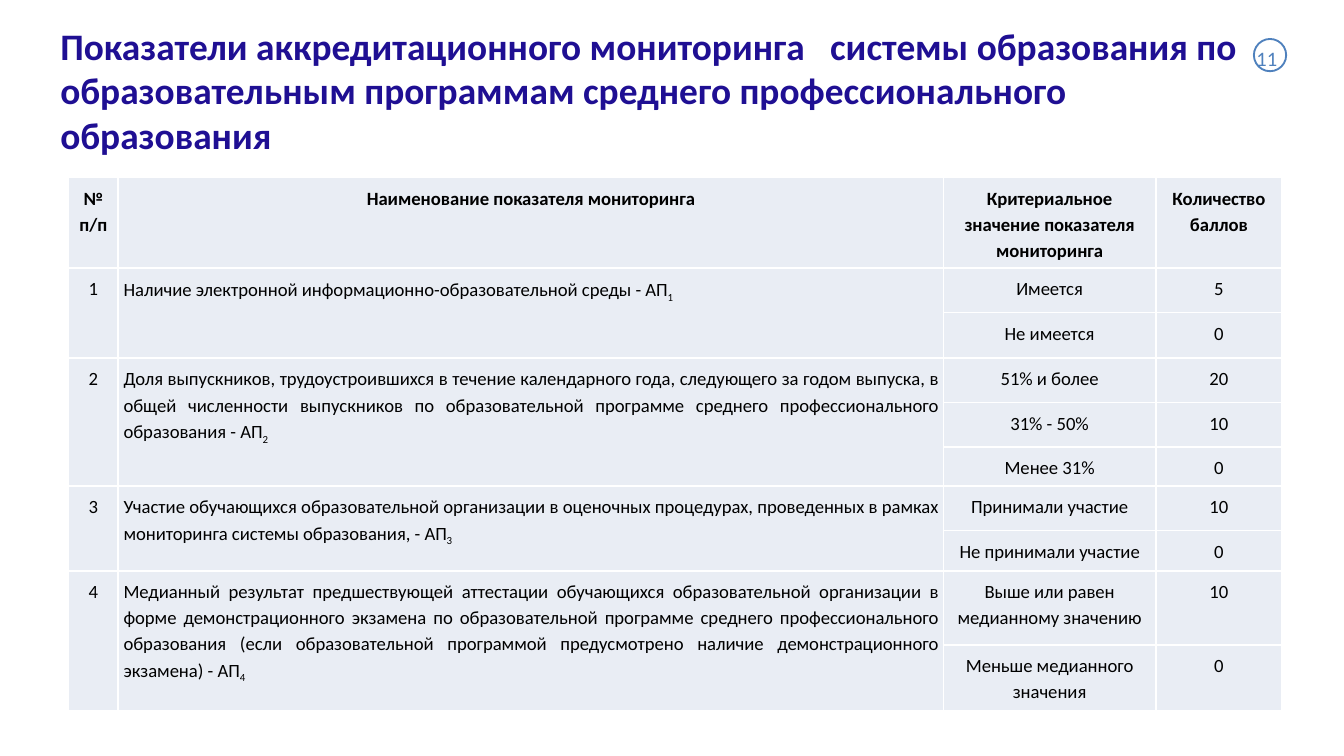
from lxml import etree
from pptx import Presentation
from pptx.dml.color import RGBColor
from pptx.enum.shapes import MSO_SHAPE
from pptx.enum.text import MSO_ANCHOR, PP_ALIGN
from pptx.oxml.ns import qn
from pptx.util import Inches, Pt

CENTER, JUSTIFY = PP_ALIGN.CENTER, PP_ALIGN.JUSTIFY
MIDDLE = MSO_ANCHOR.MIDDLE
OVAL = MSO_SHAPE.OVAL

NAVY = RGBColor(0x1F, 0x0F, 0x93)
BLUE = RGBColor(0x4F, 0x81, 0xBD)
PALE = RGBColor(0xE9, 0xED, 0xF4)
BLACK = RGBColor(0, 0, 0)
WHITE = RGBColor(0xFF, 0xFF, 0xFF)
FONT = "Calibri"

TITLE = ("Показатели аккредитационного мониторинга   системы образования по "
         "образовательным программам среднего профессионального образования")
HEADINGS = ["№ п/п", "Наименование показателя мониторинга",
            "Критериальное значение показателя мониторинга", "Количество баллов"]
# Each indicator: its name, then (criterion, points) pairs
INDICATORS = [
    ("Наличие электронной информационно-образовательной среды - АП",
     [("Имеется", 5), ("Не имеется", 0)]),
    ("Доля выпускников, трудоустроившихся в течение календарного года, следующего "
     "за годом выпуска, в общей численности выпускников по образовательной программе "
     "среднего профессионального образования - АП",
     [("51% и более", 20), ("31% - 50%", 10), ("Менее 31%", 0)]),
    ("Участие обучающихся образовательной организации в оценочных процедурах, "
     "проведенных в рамках мониторинга системы образования, - АП",
     [("Принимали участие", 10), ("Не принимали участие", 0)]),
    ("Медианный результат предшествующей аттестации обучающихся образовательной "
     "организации в форме демонстрационного экзамена по образовательной программе "
     "среднего профессионального образования (если образовательной программой "
     "предусмотрено наличие демонстрационного экзамена) - АП",
     [("Выше или равен медианному значению", 10), ("Меньше медианного значения", 0)]),
]
COLUMN_WIDTHS = [0.37, 6.14, 1.58, 0.94]
ROW_HEIGHTS = [0.61, 0.33, 0.34, 0.33, 0.33, 0.29, 0.33, 0.3, 0.55, 0.49]


def set_font(paragraph, size, color, bold=False):
    font = paragraph.font
    font.name, font.size, font.bold = FONT, Pt(size), bold
    font.color.rgb = color


def add_text(slide, box, text, size, color, bold=False):
    frame = slide.shapes.add_textbox(*map(Inches, box)).text_frame
    frame.word_wrap = True
    paragraph = frame.paragraphs[0]
    paragraph.text = text
    set_font(paragraph, size, color, bold)
    return frame


def add_title(slide, box):
    add_text(slide, box, TITLE, 20, NAVY, bold=True).vertical_anchor = MIDDLE


def add_page_number(slide, box, number):
    left, top, width, height = box
    ring = slide.shapes.add_shape(OVAL, *map(Inches, box))
    ring.shadow.inherit = False
    ring.fill.solid()
    ring.fill.fore_color.rgb = WHITE
    ring.line.color.rgb = BLUE
    ring.line.width = Pt(1)
    add_text(slide, (left - 0.08, top, width + 0.15, height + 0.05), number, 11, BLUE)


def style_cell(cell):
    cell.margin_left = cell.margin_right = Inches(0.04)
    cell.margin_top = cell.margin_bottom = Inches(0.05)
    cell.fill.solid()
    cell.fill.fore_color.rgb = PALE
    # White borders go before the fill
    properties = cell._tc.get_or_add_tcPr()
    for position, side in enumerate(("lnL", "lnR", "lnT", "lnB")):
        border = etree.Element(qn(f"a:{side}"), w=str(Pt(1)))
        fill = etree.SubElement(border, qn("a:solidFill"))
        etree.SubElement(fill, qn("a:srgbClr"), val=str(WHITE))
        properties.insert(position, border)


def write_cell(cell, text, bold=False, align=CENTER, subscript=None):
    paragraph = cell.text_frame.paragraphs[0]
    paragraph.text = str(text)
    if subscript is not None:
        run = paragraph.add_run()
        run.text = str(subscript)
        run._r.get_or_add_rPr().set("baseline", "-25000")
    paragraph.alignment = align
    paragraph.line_spacing = 1.15
    set_font(paragraph, 10, BLACK, bold)


def add_indicator_table(slide, box):
    table = slide.shapes.add_table(len(ROW_HEIGHTS), len(COLUMN_WIDTHS),
                                   *map(Inches, box)).table
    for column, width in zip(table.columns, COLUMN_WIDTHS):
        column.width = Inches(width)
    for row, height in zip(table.rows, ROW_HEIGHTS):
        row.height = Inches(height)
    for cell in table.iter_cells():
        style_cell(cell)
        set_font(cell.text_frame.paragraphs[0], 10, BLACK)

    # Heading row
    for column, heading in enumerate(HEADINGS):
        write_cell(table.cell(0, column), heading, bold=True)

    # Number and name span all criteria of an indicator
    top = 1
    for number, (name, criteria) in enumerate(INDICATORS, start=1):
        for column in (0, 1):
            table.cell(top, column).merge(table.cell(top + len(criteria) - 1, column))
        write_cell(table.cell(top, 0), number)
        write_cell(table.cell(top, 1), name, align=JUSTIFY, subscript=number)
        for row, (criterion, points) in enumerate(criteria, start=top):
            write_cell(table.cell(row, 2), criterion)
            write_cell(table.cell(row, 3), points)
        top += len(criteria)


def main():
    presentation = Presentation()
    # Widescreen, 16:9
    presentation.slide_width = Inches(10)
    presentation.slide_height = presentation.slide_width * 9 // 16
    slide = presentation.slides.add_slide(presentation.slide_layouts[6])
    add_title(slide, (0.35, 0.1, 9.15, 1.14))
    add_indicator_table(slide, (0.51, 1.32, 9.03, 3.96))
    add_page_number(slide, (9.33, 0.29, 0.24, 0.24), "11")
    presentation.save("out.pptx")


if __name__ == "__main__":
    main()
